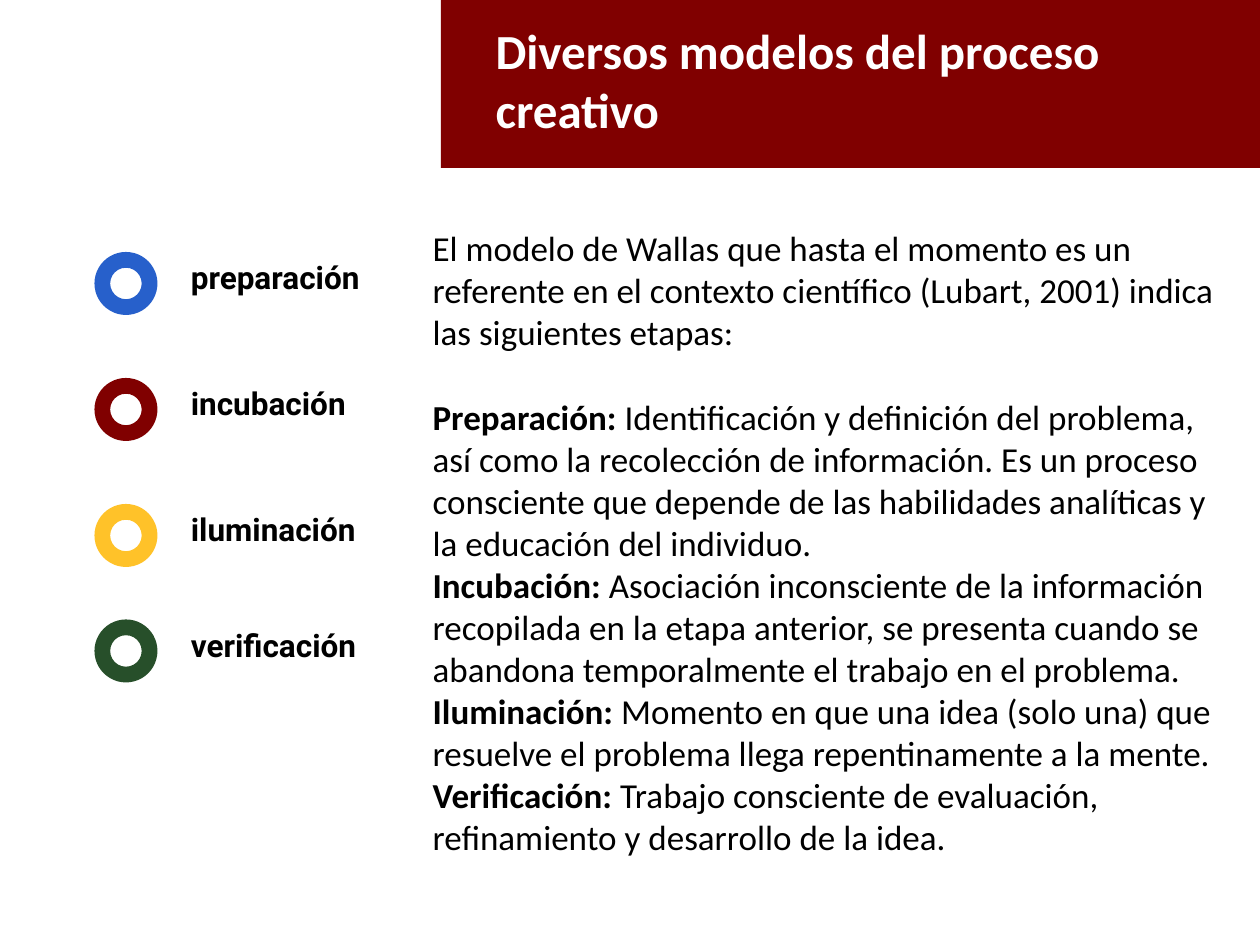
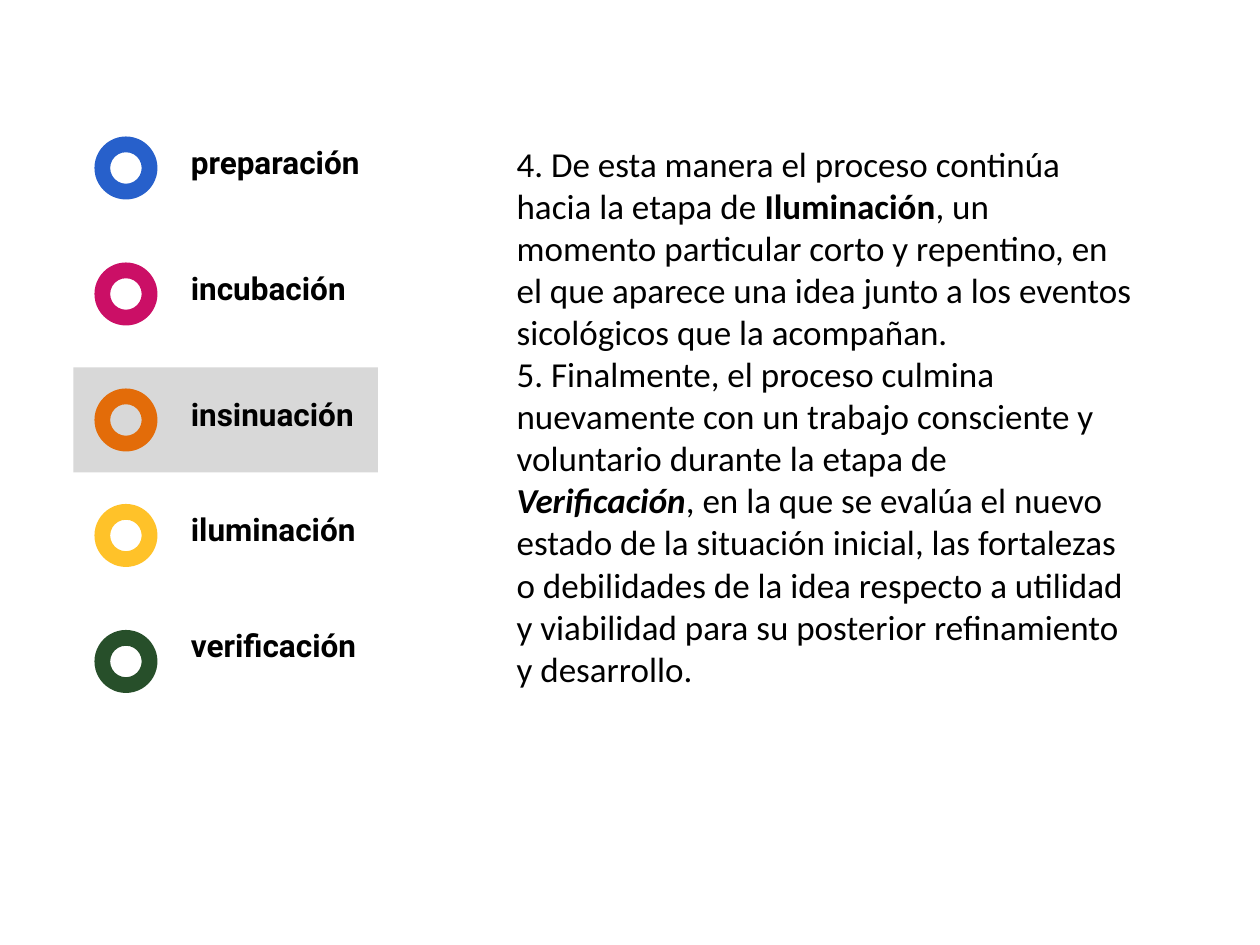
from lxml import etree
from pptx import Presentation
from pptx.dml.color import RGBColor
from pptx.enum.shapes import MSO_SHAPE as Shape
from pptx.enum.text import MSO_ANCHOR as Anchor, MSO_AUTO_SIZE as AutoSize, PP_ALIGN as Align
from pptx.oxml.ns import qn
from pptx.util import Inches, Pt

# Slide grid: 120 columns by 90 rows
WIDTH, HEIGHT = Inches(10), Inches(7.5)
COLUMNS, ROWS = 120, 90

# Shared colours and fonts
MAROON, BLUE, PINK, ORANGE = "800000", "2760CB", "CB0F66", "E36C09"
YELLOW, GREEN, GREY = "FFC229", "274F2A", "D8D8D8"
BLACK, WHITE = "000000", "FFFFFF"
TEXT_FONT, STAGE_FONT = "Calibri", "Roboto"
TEXT_SIZE, LINE_HEIGHT = 20, 24.4

# Stage list, shared by both slides
RING_COLUMN, LABEL_COLUMN, RING_SIZE = 9, 17, 6

# Each paragraph is a list of (text, style) pieces
WALLAS_MODEL = [
    [("El modelo de Wallas que hasta el momento es un referente en el contexto "
      "científico (Lubart, 2001) indica las siguientes etapas:", "")],
    [("Preparación:", "b"),
     (" Identificación y definición del problema, así como la recolección de "
      "información. Es un proceso consciente que depende de las habilidades "
      "analíticas y la educación del individuo.", "")],
    [("Incubación:", "b"),
     (" Asociación inconsciente de la información recopilada en la etapa anterior, "
      "se presenta cuando se abandona temporalmente el trabajo en el problema.", "")],
    [("Iluminación:", "b"),
     (" Momento en que una idea (solo una) que resuelve el problema llega "
      "repentinamente a la mente.", "")],
    [("Verificación:", "b"),
     (" Trabajo consciente de evaluación, refinamiento y desarrollo de la idea.", "")],
]
FINAL_STAGES = [
    [("4. De esta manera el proceso continúa hacia la etapa de ", ""),
     ("Iluminación", "b"),
     (", un momento particular corto y repentino, en el que aparece una idea junto "
      "a los eventos sicológicos que la acompañan.", "")],
    [("5. Finalmente, el proceso culmina nuevamente con un trabajo consciente y "
      "voluntario durante la etapa de ", ""),
     ("Verificación", "bi"),
     (", en la que se evalúa el nuevo estado de la situación inicial, las fortalezas "
      "o debilidades de la idea respecto a utilidad y viabilidad para su posterior "
      "refinamiento y desarrollo.", "")],
]


def color(hex_value):
    return RGBColor.from_string(hex_value)


def grid_box(column, row, columns, rows):
    """Turn grid cells into left, top, width and height."""
    return (int(WIDTH * column / COLUMNS), int(HEIGHT * row / ROWS),
            int(WIDTH * columns / COLUMNS), int(HEIGHT * rows / ROWS))


def place(shape, box):
    shape.left, shape.top, shape.width, shape.height = box


def format_run(run, font_name, size, hex_value, style=""):
    font = run.font
    font.name, font.size = font_name, Pt(size)
    font.bold, font.italic = "b" in style, "i" in style
    font.color.rgb = color(hex_value)


def prepare_frame(text_frame):
    text_frame.word_wrap = True
    text_frame.auto_size = AutoSize.NONE
    text_frame.vertical_anchor = Anchor.TOP


def add_filled_shape(slide, kind, box, hex_value):
    shape = slide.shapes.add_shape(kind, *box)
    shape.shadow.inherit = False
    shape.fill.solid()
    shape.fill.fore_color.rgb = color(hex_value)
    shape.line.fill.background()
    return shape


def add_title_band(slide, text):
    band = add_filled_shape(slide, Shape.RECTANGLE, grid_box(42, 0, 78, 16), MAROON)
    title = slide.shapes.title
    title._element.addprevious(band._element)  # the band lies behind the title
    place(title, grid_box(46, 1.4, 71, 12.5))
    title.text_frame.text = text
    prepare_frame(title.text_frame)
    paragraph = title.text_frame.paragraphs[0]
    paragraph.alignment = Align.LEFT
    format_run(paragraph.runs[0], TEXT_FONT, 28, WHITE, "b")


def remove_bullet(paragraph):
    properties = paragraph._p.get_or_add_pPr()
    properties.set("marL", "0")
    properties.set("indent", "0")
    etree.SubElement(properties, qn("a:buNone"))


def fill_body(slide, box, content, gap_after_first=0):
    body = slide.placeholders[1]
    place(body, box)
    text_frame = body.text_frame
    prepare_frame(text_frame)
    for index, pieces in enumerate(content):
        paragraph = text_frame.add_paragraph() if index else text_frame.paragraphs[0]
        paragraph.space_before = Pt(0)
        paragraph.space_after = Pt(0 if index else gap_after_first)
        remove_bullet(paragraph)
        for text, style in pieces:
            run = paragraph.add_run()
            run.text = text
            format_run(run, TEXT_FONT, TEXT_SIZE, BLACK, style)


def add_stage(slide, name, hex_value, row, ring_row=None):
    """A coloured ring with its label; the ring may sit on a row of its own."""
    ring_row = row if ring_row is None else ring_row
    add_filled_shape(slide, Shape.DONUT,
                     grid_box(RING_COLUMN, ring_row, RING_SIZE, RING_SIZE), hex_value)
    label = slide.shapes.add_textbox(*grid_box(LABEL_COLUMN, row, 19, 4.8))
    label.text_frame.text = name
    prepare_frame(label.text_frame)
    format_run(label.text_frame.paragraphs[0].runs[0], STAGE_FONT, 18, BLACK, "b")


def build_wallas_slide(presentation):
    slide = presentation.slides.add_slide(presentation.slide_layouts[1])
    fill_body(slide, grid_box(40, 21, 77, 62), WALLAS_MODEL, gap_after_first=LINE_HEIGHT)
    add_title_band(slide, "Diversos modelos del proceso creativo")
    add_stage(slide, "preparación", BLUE, 24)
    add_stage(slide, "incubación", MAROON, 36)
    add_stage(slide, "iluminación", YELLOW, 48)
    add_stage(slide, "verificación", GREEN, 59)


def build_final_stages_slide(presentation):
    slide = presentation.slides.add_slide(presentation.slide_layouts[1])
    title = slide.shapes.title._element
    title.getparent().remove(title)
    fill_body(slide, grid_box(48, 13, 61, 54), FINAL_STAGES)
    # Highlight behind the added stage
    add_filled_shape(slide, Shape.RECTANGLE, grid_box(7, 35, 29, 10), GREY)
    add_stage(slide, "preparación", BLUE, 13)
    add_stage(slide, "incubación", PINK, 25)
    add_stage(slide, "insinuación", ORANGE, 37)
    add_stage(slide, "iluminación", YELLOW, 48)
    add_stage(slide, "verificación", GREEN, 59, ring_row=60)


def main():
    presentation = Presentation()
    presentation.slide_width, presentation.slide_height = WIDTH, HEIGHT
    build_wallas_slide(presentation)
    build_final_stages_slide(presentation)
    presentation.save("out.pptx")


if __name__ == "__main__":
    main()
